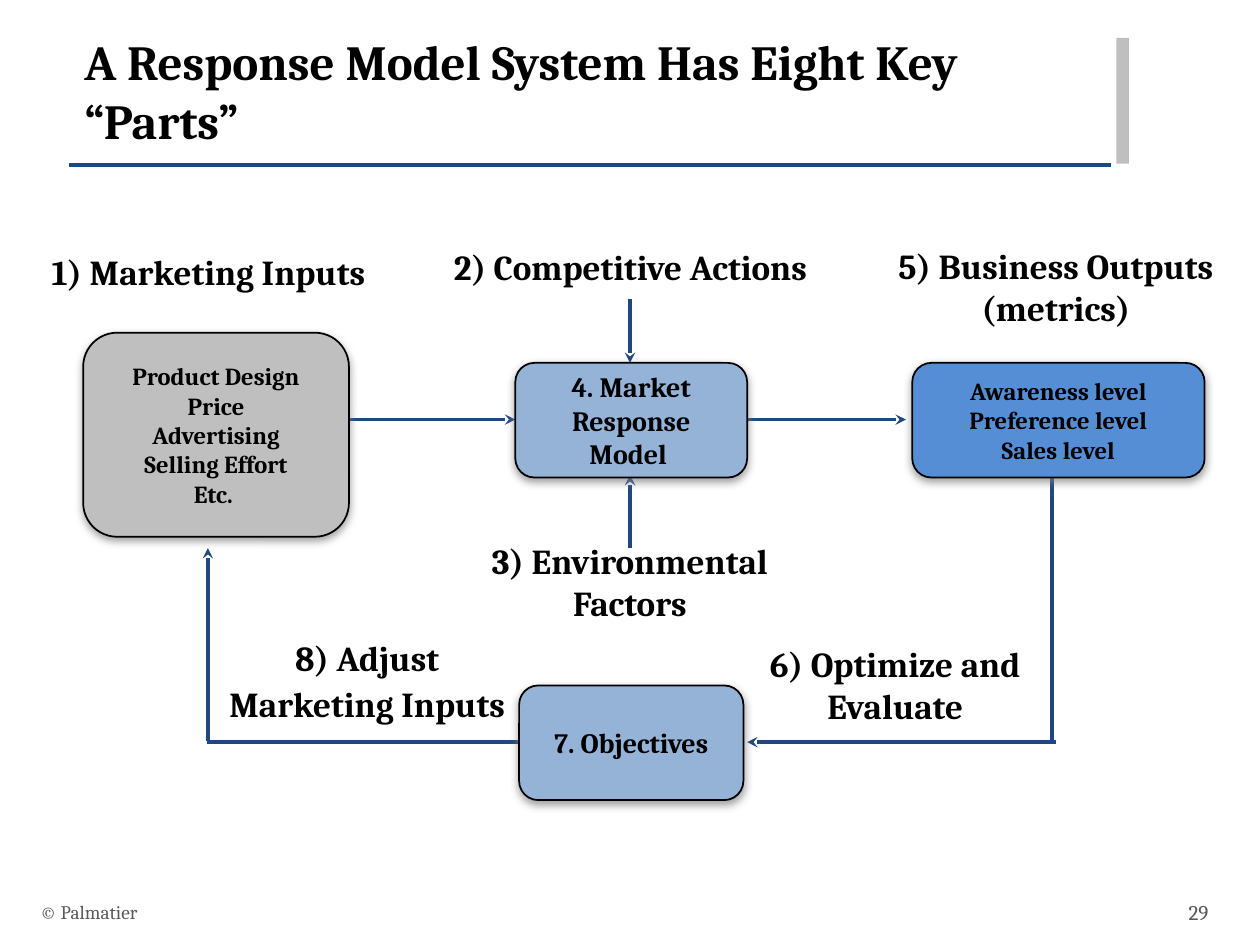
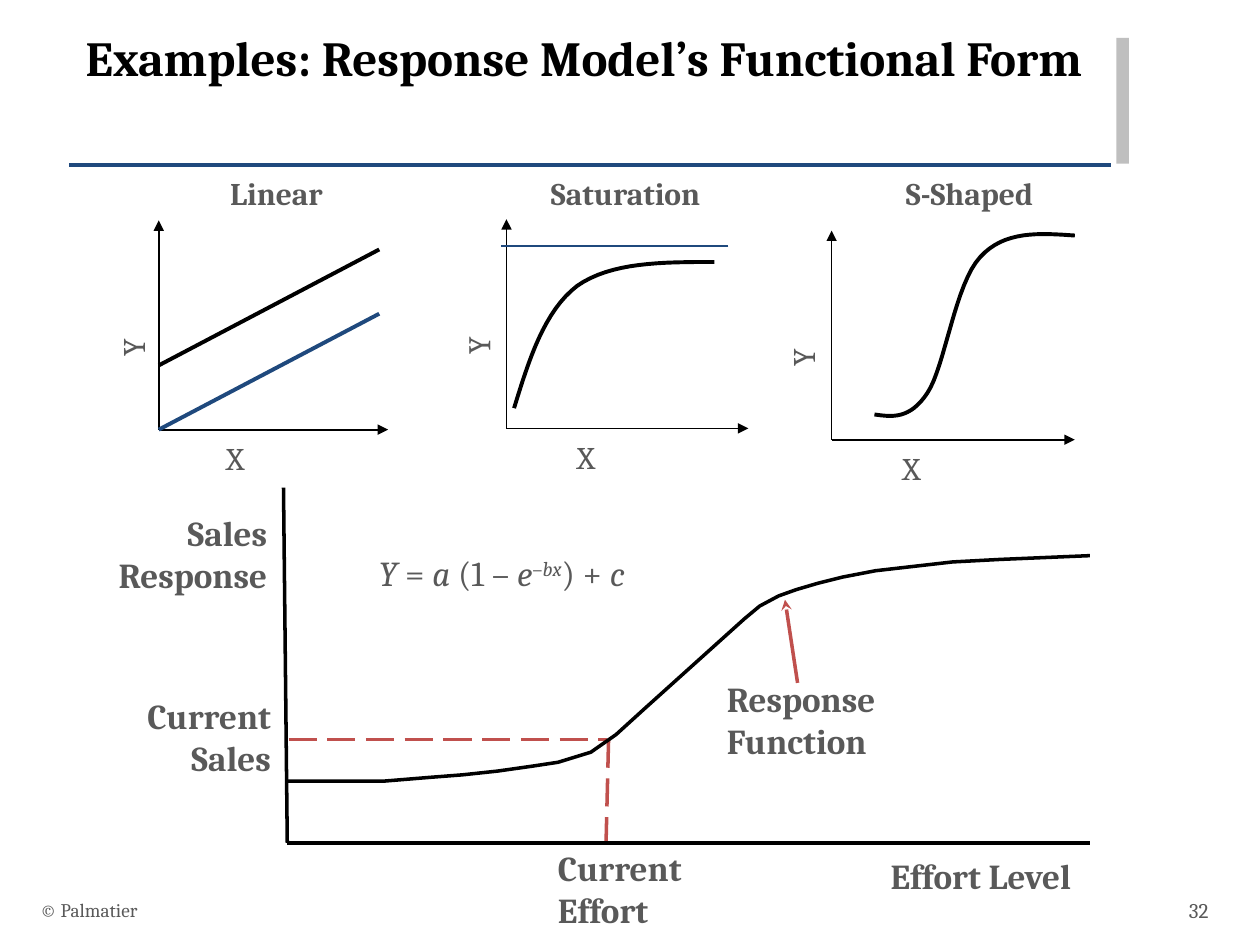
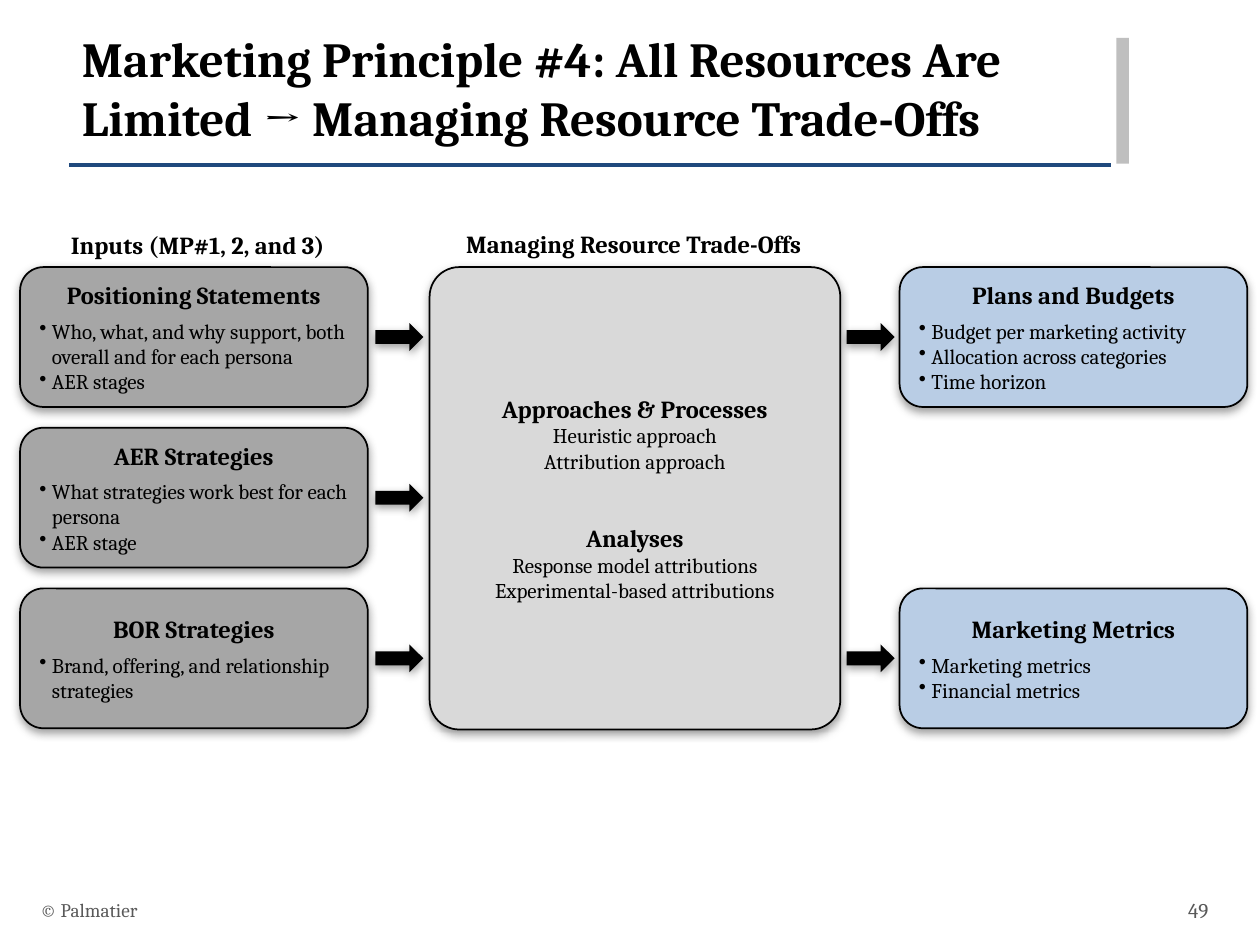
from dataclasses import dataclass

from lxml.etree import SubElement
from pptx import Presentation
from pptx.dml.color import RGBColor
from pptx.enum.dml import MSO_LINE_DASH_STYLE as Dash
from pptx.enum.shapes import MSO_CONNECTOR as Connector, MSO_SHAPE as Shape
from pptx.enum.text import MSO_ANCHOR as Anchor, MSO_AUTO_SIZE as AutoSize, PP_ALIGN as Align
from pptx.oxml.ns import qn
from pptx.util import Inches, Pt

FONT = "Cambria"
COLUMNS, ROWS = 100, 75
CELL = 0.1
TITLE_ONLY = 5
COLORS = {
    "ink": "000000", "text": "595959", "navy": "1F497D", "red": "C0504D",
    "bar": "BFBFBF", "model": "95B3D7", "outputs": "558ED5", "shadow": "808080",
    "process": "D9D9D9", "input_card": "A6A6A6", "output_card": "B9CDE5",
}


@dataclass
class Box:
    """Hold a region in grid cells."""

    left: float
    top: float
    width: float
    height: float

    def inner(self, left, top, width, height):
        """Return a box offset from this one's top left corner."""
        return Box(self.left + left, self.top + top, width, height)

    def point(self, x, y):
        """Return the slide position of a point inside the box."""
        return cells(self.left + x), cells(self.top + y)

    def frame(self):
        """Return the slide position and size."""
        return [cells(n) for n in (self.left, self.top, self.width, self.height)]


def cells(count):
    """Convert grid cells to a length."""
    return Inches(count * CELL)


def rgb(name):
    """Look up a named colour."""
    return RGBColor.from_string(COLORS[name])


def add_span(para, text, size, color="ink", bold=False, italic=False, raised=False):
    """Add one formatted run."""
    span = para.add_run()
    span.text = text
    font = span.font
    font.name, font.size, font.bold, font.italic = FONT, Pt(size), bold, italic
    font.color.rgb = rgb(color)
    if raised:
        span._r.get_or_add_rPr().set("baseline", "30000")


def add_para(frame, align=Align.CENTER, before=0, after=0, spacing=None):
    """Return the first unused paragraph of a text frame."""
    para = frame.paragraphs[0]
    if para.runs:
        para = frame.add_paragraph()
    para.alignment = align
    para.space_before, para.space_after = Pt(before), Pt(after)
    if spacing:
        para.line_spacing = spacing
    return para


def add_lines(frame, lines, size, color="ink", bold=True, align=Align.CENTER, spacing=None):
    """Add paragraphs that share one format."""
    for line in lines:
        add_span(add_para(frame, align, spacing=spacing), line, size, color, bold)


def add_bullet(frame, text, size):
    """Add one bulleted paragraph."""
    para = add_para(frame, Align.LEFT)
    props = para._p.get_or_add_pPr()
    props.set("marL", str(cells(1)))
    props.set("indent", str(-cells(1)))
    SubElement(props, qn("a:buChar")).set("char", "•")
    add_span(para, text, size)


def add_label(page, box, lines, size=20, color="ink", bold=True, align=Align.CENTER,
              wrap=True, anchor=Anchor.TOP, spacing=None):
    """Add a text box."""
    label = page.shapes.add_textbox(*box.frame())
    frame = label.text_frame
    frame.word_wrap, frame.vertical_anchor = wrap, anchor
    add_lines(frame, lines, size, color, bold, align, spacing)
    return label


def cast_shadow(shape):
    """Give a shape a soft shadow below it."""
    effects = SubElement(shape._element.spPr, qn("a:effectLst"))
    shadow = SubElement(effects, qn("a:outerShdw"), blurRad=str(Pt(5)), dist=str(Pt(2)),
                        dir="5400000", algn="t", rotWithShape="0")
    color = SubElement(shadow, qn("a:srgbClr"), val=COLORS["shadow"])
    SubElement(color, qn("a:alpha"), val="75000")


def add_solid(page, kind, box, color):
    """Add a filled shape without outline."""
    shape = page.shapes.add_shape(kind, *box.frame())
    shape.fill.solid()
    shape.fill.fore_color.rgb = rgb(color)
    shape.line.fill.background()
    return shape


def add_card(page, box, color, corner=0.167):
    """Add an outlined rounded box and return its text frame."""
    card = add_solid(page, Shape.ROUNDED_RECTANGLE, box, color)
    card.adjustments[0] = corner
    card.line.fill.solid()
    card.line.color.rgb = rgb("ink")
    card.line.width = Pt(1)
    cast_shadow(card)
    frame = card.text_frame
    frame.word_wrap, frame.vertical_anchor = True, Anchor.MIDDLE
    return frame


def add_line(page, box, start, end, color="navy", width=2, arrow=None, dash=None):
    """Draw a straight line inside a box, with an optional head at its end."""
    line = page.shapes.add_connector(Connector.STRAIGHT, *box.point(*start), *box.point(*end))
    line.line.color.rgb = rgb(color)
    line.line.width = Pt(width)
    if dash:
        line.line.dash_style = dash
    if arrow:
        SubElement(line.line._get_or_add_ln(), qn("a:tailEnd"), type=arrow)
    SubElement(line._element.spPr, qn("a:effectLst"))


def add_path(page, box, points, width):
    """Draw an open outline through points inside a box."""
    first, *rest = [box.point(*point) for point in points]
    builder = page.shapes.build_freeform(*first)
    builder.add_line_segments(rest, close=False)
    path = builder.convert_to_shape()
    path.shadow.inherit = False
    path.fill.background()
    path.line.color.rgb = rgb("ink")
    path.line.width = Pt(width)


def bezier(knots, steps=16):
    """Sample a chain of cubic curves."""
    points = [knots[0]]
    for i in range(0, len(knots) - 1, 3):
        for step in range(1, steps + 1):
            t = step / steps
            weights = ((1 - t) ** 3, 3 * t * (1 - t) ** 2, 3 * t * t * (1 - t), t ** 3)
            points.append(tuple(sum(w * knot[axis] for w, knot in zip(weights, knots[i:i + 4]))
                                for axis in (0, 1)))
    return points


def start_page(deck, title, title_box, number, footer_top):
    """Add a slide with its title, rule, side bar and footer."""
    page = deck.slides.add_slide(deck.slide_layouts[TITLE_ONLY])
    whole = Box(0, 0, COLUMNS, ROWS)
    add_line(page, whole, (5.5, 13.1), (88.2, 13.1))
    add_solid(page, Shape.RECTANGLE, Box(88.6, 3, 1, 10), "bar").shadow.inherit = False
    holder = page.shapes.title
    holder.left, holder.top, holder.width, holder.height = title_box.frame()
    frame = holder.text_frame
    frame.word_wrap, frame.vertical_anchor, frame.auto_size = True, Anchor.TOP, AutoSize.NONE
    add_lines(frame, [title], 28, align=Align.LEFT)
    footer = whole.inner(0, footer_top, COLUMNS, 4)
    add_label(page, footer.inner(90.8, 0, 6.1, 4), [number], 12, "text", False,
              Align.RIGHT, anchor=Anchor.MIDDLE)
    add_label(page, footer.inner(2.2, 0, 67, 4), ["© Palmatier"], 11, "text", False,
              Align.LEFT, anchor=Anchor.MIDDLE)
    return page


def draw_model_system(page, box):
    """Draw the eight parts of the response model."""
    labels = [
        ((2.7, 1.4, 27.7, 4.4), ["1) Marketing Inputs"], False, None),
        ((33.9, 1, 32.3, 4.4), ["2) Competitive Actions"], False, None),
        ((69.2, 0.9, 29.2, 7.7), ["5) Business Outputs (metrics)"], True, None),
        ((37.6, 24.3, 24.8, 7.7), ["3) Environmental", "Factors"], False, None),
        ((58.8, 32.5, 24.5, 7.7), ["6) Optimize and Evaluate"], True, None),
        ((15.8, 31.7, 26.7, 8.4), ["8) Adjust Marketing Inputs"], True, 1.1),
    ]
    for place, lines, wrap, spacing in labels:
        add_label(page, box.inner(*place), lines, wrap=wrap, spacing=spacing)
    for start, end in [((83.5, 19.5), (83.5, 40.8)), ((41.2, 40.9), (16.4, 40.9))]:
        add_line(page, box, start, end)
    arrows = [
        ((27.5, 15.3), (40.9, 15.3)), ((58.6, 15.3), (71.9, 15.3)),
        ((50, 5.7), (50, 10.8)), ((50, 25.5), (50, 19.7)),
        ((83.8, 40.9), (59.3, 40.9)), ((16.5, 40.8), (16.5, 25.5)),
    ]
    for start, end in arrows:
        add_line(page, box, start, end, arrow="stealth")
    cards = [
        ((6.6, 8.4, 21.1, 16.2), "bar", 14,
         ["Product Design", "Price", "Advertising", "Selling Effort", "Etc. "]),
        ((40.9, 10.8, 18.4, 9.1), "model", 16, ["4. Market Response Model "]),
        ((72.4, 10.8, 23.2, 9.1), "outputs", 14,
         ["Awareness level", "Preference level", "Sales level"]),
        ((41.2, 36.4, 17.8, 9.1), "model", 16, ["7. Objectives"]),
    ]
    for place, color, size, lines in cards:
        add_lines(add_card(page, box.inner(*place), color), lines, size)


def draw_small_axes(page, box, title, title_left, title_top):
    """Draw titled X and Y axes along the left and bottom of a box."""
    origin = (0, box.height)
    for end in [(box.width, box.height), (0, 0)]:
        add_line(page, box, origin, end, "ink", 1, "triangle")
    y_box = box.inner(-0.21 * box.width, box.height - 8.6, 3.5, 4)
    x_box = box.inner(0.24 * box.width, box.height + 0.25, 3.5, 4)
    for name, place, turn in [("Y", y_box, 270), ("X", x_box, 0)]:
        label = add_label(page, place, [name], 18, "text", False, Align.LEFT, wrap=False)
        label.rotation = turn
    add_label(page, box.inner(title_left, title_top, 24.3, 4), [title], 18, "text")


def draw_linear(page, box):
    """Draw the linear form."""
    draw_small_axes(page, box, "Linear", -2.8, -4.2)
    for rise, color in [(0, "ink"), (5.1, "navy")]:
        add_line(page, box, (0, 11.5 + rise), (17.5, 2.3 + rise), color, 2.25)


def draw_saturation(page, box):
    """Draw the saturation form below its ceiling."""
    draw_small_axes(page, box, "Saturation", -2.7, -4.1)
    knots = [(0.6, 15), (1.8, 11.1), (3, 7.3), (5.6, 5.3), (8.3, 3.4), (12.4, 3.4), (16.5, 3.4)]
    add_path(page, box, bezier(knots), 2.25)
    add_line(page, box, (17.6, 2.1), (-0.4, 2.1), width=1)


def draw_s_shape(page, box):
    """Draw the S-shaped form."""
    draw_small_axes(page, box, "S-Shaped", -1.2, -5)
    knots = [(3.4, 14.6), (4.8, 14.8), (6.2, 15), (7.6, 12.9), (9, 10.8), (9.8, 4.2),
             (11.8, 2.1), (13.7, 0), (16.5, 0.2), (19.3, 0.4)]
    add_path(page, box, bezier(knots), 2.25)


def draw_formula(page, box):
    """Write the response equation."""
    frame = page.shapes.add_textbox(*box.frame()).text_frame
    frame.word_wrap = True
    para = add_para(frame)
    spans = [("Y", True, False), (" = ", False, False), ("a ", True, False),
             ("(1 – ", False, False), ("e", True, False), ("–", False, True),
             ("bx", True, True), (") + ", False, False), ("c", True, False)]
    for text, italic, raised in spans:
        add_span(para, text, 20, "text", italic=italic, raised=raised)


def draw_sales_response(page, box):
    """Draw the sales response curve with its current position."""
    for start, end in [((0.1, 20), (25.4, 20)), ((25.5, 20), (25.3, box.height))]:
        add_line(page, box, start, end, "red", dash=Dash.LONG_DASH)
    curve = [
        (0, 23.3), (5.1, 23.3), (7.6, 23.3), (11.3, 23), (13.9, 22.8), (16.7, 22.5),
        (19.5, 22.1), (21.5, 21.8), (24.1, 21), (26.1, 19.6), (28.3, 17.6), (36.3, 10.4),
        (37.5, 9.4), (39, 8.6), (40.4, 8.1), (42.1, 7.6), (44.1, 7.1), (46.7, 6.6),
        (52.8, 5.9), (56.6, 5.7), (63.7, 5.4),
    ]
    add_path(page, box, curve, 2)
    for end in [(-0.3, 0), (box.width, box.height)]:
        add_line(page, box, (0, box.height), end, "ink")
    add_line(page, box, (40.5, 15.5), (39.5, 8.9), "red", arrow="stealth")
    labels = [
        ((-14.5, 15.9, 14.2, 7.7), ["Current", "Sales"], Align.RIGHT),
        ((33.9, 14.6, 18.4, 7.7), ["Response", "Function"], Align.LEFT),
        ((20.5, 28, 19.2, 7.7), ["Current", "Effort"], Align.LEFT),
        ((-17.3, 1.4, 16.7, 7.7), ["Sales Response"], Align.RIGHT),
    ]
    for place, lines, align in labels:
        add_label(page, box.inner(*place), lines, color="text", align=align)
    add_label(page, box.inner(46.9, 28.6, 16.9, 4.4), ["Effort Level"], color="text",
              align=Align.LEFT, wrap=False)
    draw_formula(page, box.inner(-1.1, 4.6, 36.3, 9.2))


def draw_process(page, box):
    """Draw the central approaches and analyses box."""
    frame = add_card(page, box, "process", 0.072)
    groups = [
        ("Approaches & Processes", 0, ["Heuristic approach", "Attribution approach"]),
        ("Analyses", 28.5, ["Response model attributions", "Experimental-based attributions"]),
    ]
    for heading, gap, lines in groups:
        add_span(add_para(frame, before=gap), heading, 14, bold=True)
        add_lines(frame, lines, 12, bold=False)


def draw_trade_offs(page, box):
    """Draw inputs, trade-off process and outputs with arrows between them."""
    row_step, card_width, card_height = 12.75, 27.6, 11.1
    add_label(page, box.inner(30.8, -3.5, 35.8, 3.4), ["Managing Resource Trade-Offs"], 14)
    add_label(page, box.inner(0.5, -3.4, 27.2, 3.4), ["Inputs (MP#1, 2, and 3)"], 14)
    draw_process(page, box.inner(32.5, 0, 32.6, box.height))
    inputs, outputs = (0, 28.2, "input_card"), (69.8, 65.6, "output_card")
    cards = [
        (inputs, 0, "Positioning Statements",
         ["Who, what, and why support, both overall and for each persona", "AER stages"]),
        (inputs, 1, "AER Strategies",
         ["What strategies work best for each persona", "AER stage"]),
        (inputs, 2, "BOR Strategies", ["Brand, offering, and relationship strategies"]),
        (outputs, 0, "Plans and Budgets",
         ["Budget per marketing activity", "Allocation across categories", "Time horizon"]),
        (outputs, 2, "Marketing Metrics", ["Marketing metrics", "Financial metrics"]),
    ]
    for (left, arrow_left, color), row, heading, bullets in cards:
        top = row * row_step
        frame = add_card(page, box.inner(left, top, card_width, card_height), color)
        add_span(add_para(frame, after=4.8), heading, 14, bold=True)
        for bullet in bullets:
            add_bullet(frame, bullet, 12)
        arrow_box = box.inner(arrow_left, top + 4.45, 3.8, 2.2)
        cast_shadow(add_solid(page, Shape.RIGHT_ARROW, arrow_box, "ink"))


def main():
    """Build and save the deck."""
    deck = Presentation()
    deck.slide_width, deck.slide_height = cells(COLUMNS), cells(ROWS)

    page = start_page(deck, "A Response Model System Has Eight Key “Parts”",
                      Box(5.7, 2, 81.6, 8.3), "29", 70.4)
    draw_model_system(page, Box(0, 18, COLUMNS, 48))

    page = start_page(deck, "Examples: Response Model’s Functional Form",
                      Box(5.8, 1.7, 83.3, 10.1), "32", 70.2)
    draw_linear(page, Box(12.6, 17.5, 18.2, 16.6))
    draw_saturation(page, Box(40.2, 17.4, 19.2, 16.6))
    draw_s_shape(page, Box(66, 18.3, 19.3, 16.6))
    draw_sales_response(page, Box(22.8, 38.7, 63.7, 28.2))

    page = start_page(
        deck, "Marketing Principle #4: All Resources Are Limited → Managing Resource Trade-Offs",
        Box(5.5, 1.8, 82.6, 8.8), "49", 70.2)
    draw_trade_offs(page, Box(1.6, 21.2, 97.4, 36.7))

    deck.save("out.pptx")


if __name__ == "__main__":
    main()
